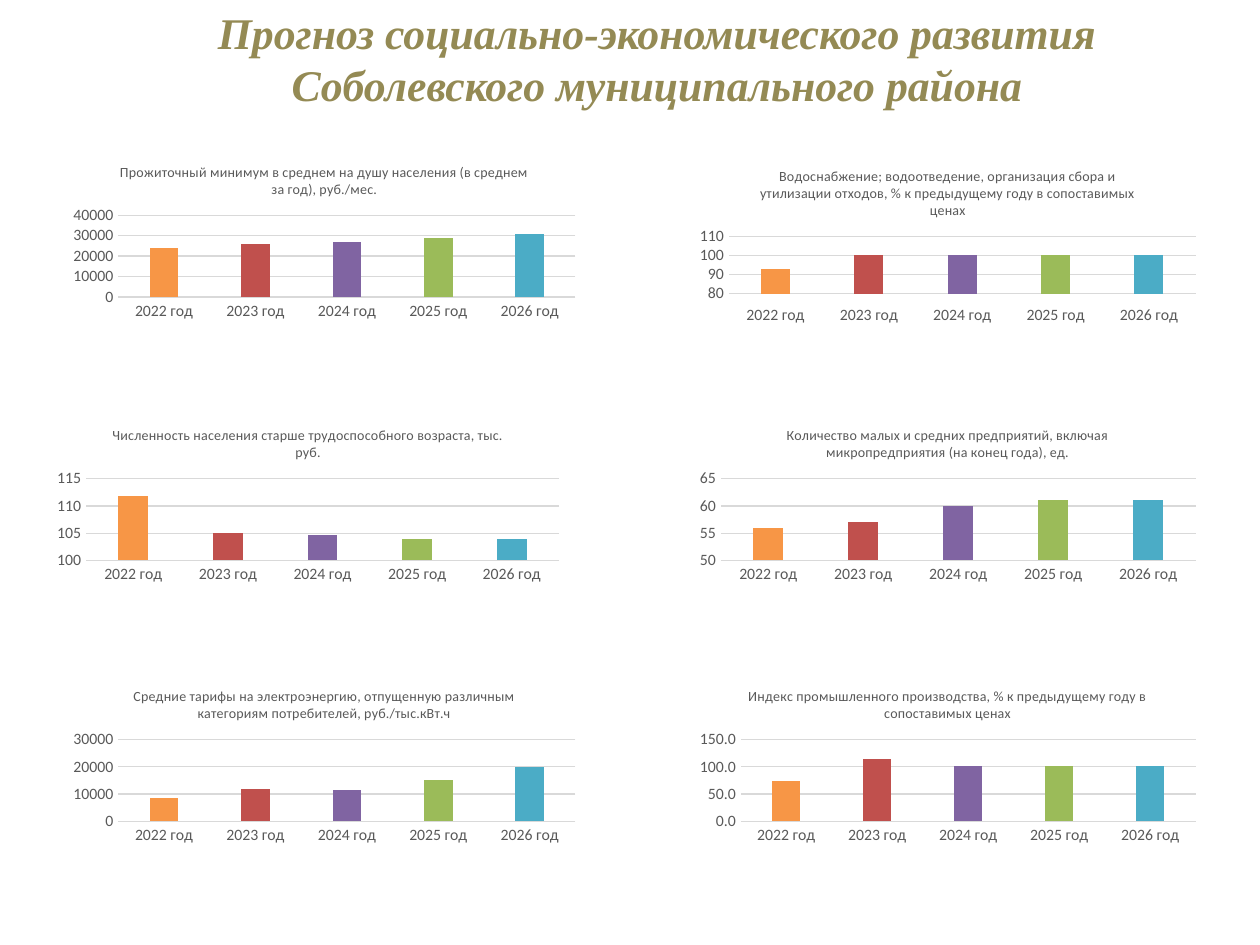
"""Builds a slide with six column charts of a district forecast."""
import pptx
import pptx.chart.data
import pptx.dml.color
import pptx.enum.chart
import pptx.enum.text
import pptx.util

Cm = pptx.util.Cm
Pt = pptx.util.Pt
RGBColor = pptx.dml.color.RGBColor

KHAKI = RGBColor(0x94, 0x8A, 0x54)
GRAY = RGBColor(0x59, 0x59, 0x59)
SILVER = RGBColor(0xD9, 0xD9, 0xD9)
BLACK = RGBColor(0, 0, 0)
BLUE = RGBColor(0x4F, 0x81, 0xBD)
HUES = (
    RGBColor(0xF7, 0x96, 0x46),
    RGBColor(0xC0, 0x50, 0x4D),
    RGBColor(0x80, 0x64, 0xA2),
    RGBColor(0x9B, 0xBB, 0x59),
    RGBColor(0x4B, 0xAC, 0xC6),
)
YEARS = [f"{year} год" for year in range(2022, 2027)]
HEADING = (
    "Прогноз социально-экономического развития",
    "Соболевского муниципального района",
)
LEFT, RIGHT = 1.27, 13.9
WIDE, SLIM = 10.54, 10.41
TOP, MIDDLE, LOW = 3.02, 8.33, 13.59

CHARTS = (
    ("Индекс промышленного производства, % к предыдущему году в сопоставимых ценах",
     RIGHT, LOW, SLIM, (74, 114, 102, 102, 102), (0, 150, 50), "0.0"),
    ("Прожиточный минимум в среднем на душу населения (в среднем за год), руб./мес.",
     LEFT, TOP, WIDE, (24000, 26000, 27000, 29000, 31000), (0, 40000, 10000), "General"),
    ("Средние тарифы на электроэнергию, отпущенную различным категориям потребителей, "
     "руб./тыс.кВт.ч",
     LEFT, LOW, WIDE, (8500, 11800, 11600, 15100, 20000), (0, 30000, 10000), "General"),
    ("Количество малых и средних предприятий, включая микропредприятия (на конец года), ед.",
     RIGHT, MIDDLE, SLIM, (56, 57, 60, 61, 61), (50, 65, 5), "General"),
    ("Водоснабжение; водоотведение, организация сбора и утилизации отходов, "
     "% к предыдущему году в сопоставимых ценах",
     RIGHT, 3.1, SLIM, (93, 100, 100, 100, 100), (80, 110, 10), "General"),
    ("Численность населения старше трудоспособного возраста, тыс. руб.",
     0.94, MIDDLE, WIDE, (111.8, 105, 104.7, 104, 104), (100, 115, 5), "General"),
)


class Slide:
    """Holds the chart style and the current slide."""

    face = "Calibri"
    high = 3.51

    def __init__(self, deck):
        """Adds a blank slide to the deck."""
        self.page = deck.slides.add_slide(deck.slide_layouts[6])

    def font(self, font, size, color):
        """Applies the chart typeface."""
        font.name, font.size, font.bold = self.face, Pt(size), False
        font.color.rgb = color

    def heading(self, lines, left, top, width, height):
        """Adds the slide heading, one paragraph a line."""
        box = self.page.shapes.add_textbox(Cm(left), Cm(top), Cm(width), Cm(height))
        frame = box.text_frame
        frame.word_wrap = True
        frame.vertical_anchor = pptx.enum.text.MSO_ANCHOR.MIDDLE
        for count, line in enumerate(lines):
            para = frame.add_paragraph() if count else frame.paragraphs[0]
            para.alignment = pptx.enum.text.PP_ALIGN.CENTER
            para._p.get_or_add_pPr().set("marL", str(Cm(1.98)))
            run = para.add_run()
            run.text = line
            font = run.font
            font.name, font.size = "Times New Roman", Pt(25)
            font.bold = font.italic = True
            font.color.rgb = KHAKI

    def axis(self, axis):
        """Styles the parts that both axes share."""
        axis.major_tick_mark = axis.minor_tick_mark = pptx.enum.chart.XL_TICK_MARK.NONE
        self.font(axis.tick_labels.font, 9, GRAY)

    def line(self, line):
        """Draws a thin silver line."""
        line.color.rgb = SILVER
        line.width = Pt(0.75)

    def chart(self, title, left, top, width, values, scale, form):
        """Adds a column chart with one colour a year."""
        data = pptx.chart.data.CategoryChartData()
        data.categories = YEARS
        data.add_series(title, values)
        chart = self.page.shapes.add_chart(
            pptx.enum.chart.XL_CHART_TYPE.COLUMN_CLUSTERED,
            Cm(left), Cm(top), Cm(width), Cm(self.high), data).chart
        self.font(chart.font, 10, BLACK)
        chart.has_legend = False
        chart.has_title = True
        run = chart.chart_title.text_frame.paragraphs[0].add_run()
        run.text = title
        self.font(run.font, 8, GRAY)
        chart.chart_title.include_in_layout = False

        years, scores = chart.category_axis, chart.value_axis
        self.axis(years)
        self.line(years.format.line)
        if scale[0] == 80:
            years.tick_label_position = pptx.enum.chart.XL_TICK_LABEL_POSITION.LOW
        self.axis(scores)
        scores.format.line.fill.background()
        self.line(scores.major_gridlines.format.line)
        scores.minimum_scale, scores.maximum_scale, scores.major_unit = scale
        scores.tick_labels.number_format = form
        scores.tick_labels.number_format_is_linked = False

        plot = chart.plots[0]
        plot.gap_width = 219
        plot.vary_by_categories = False
        series = plot.series[0]
        series.format.fill.solid()
        series.format.fill.fore_color.rgb = BLUE
        for place, hue in enumerate(HUES):
            fill = series.points[place].format.fill
            fill.solid()
            fill.fore_color.rgb = hue


def main():
    """Builds and saves the deck."""
    deck = pptx.Presentation()
    deck.slide_width, deck.slide_height = Cm(25.4), Cm(19.05)
    slide = Slide(deck)
    slide.heading(HEADING, -1.3, 0.38, 27.1, 1.57)
    for item in CHARTS:
        slide.chart(*item)
    deck.save("out.pptx")


if __name__ == "__main__":
    main()
